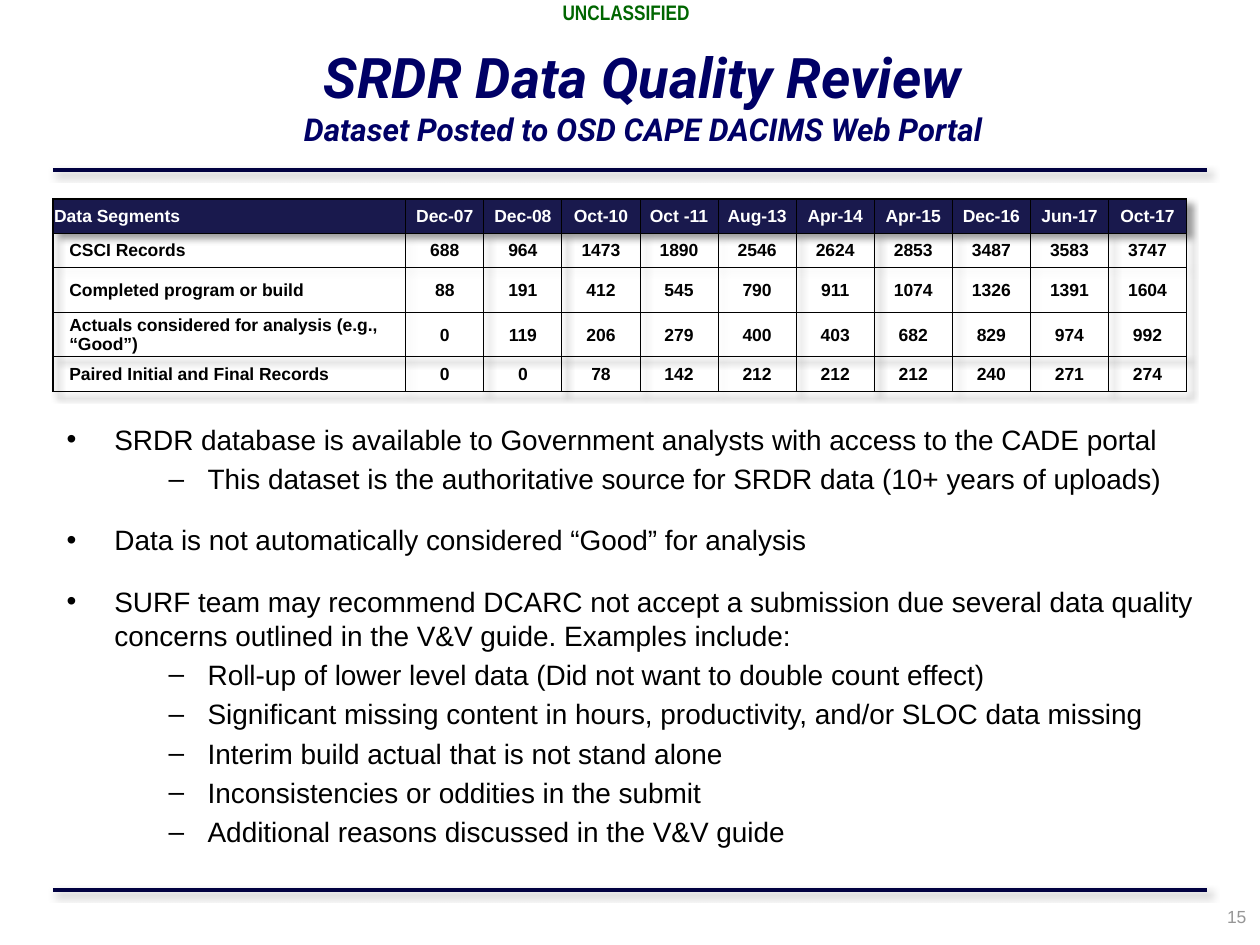
from lxml.etree import SubElement
from pptx import Presentation
from pptx.dml.color import RGBColor
from pptx.enum.shapes import MSO_CONNECTOR
from pptx.enum.text import MSO_ANCHOR, PP_ALIGN
from pptx.oxml.ns import qn
from pptx.util import Inches, Pt

COLORS = {
    "rule": "010141", "marking": "006600", "title": "000066", "header": "19194D",
    "black": "000000", "white": "FFFFFF", "number": "969696",
}

HEADINGS = ["Data Segments", "Dec-07", "Dec-08", "Oct-10", "Oct -11", "Aug-13",
            "Apr-14", "Apr-15", "Dec-16", "Jun-17", "Oct-17"]
SEGMENTS = [
    ["CSCI Records", 688, 964, 1473, 1890, 2546, 2624, 2853, 3487, 3583, 3747],
    ["Completed program or build", 88, 191, 412, 545, 790, 911, 1074, 1326, 1391, 1604],
    ["Actuals considered for analysis (e.g., “Good”)",
     0, 119, 206, 279, 400, 403, 682, 829, 974, 992],
    ["Paired Initial and Final Records", 0, 0, 78, 142, 212, 212, 212, 240, 271, 274],
]
ROW_HEIGHTS = [0.27, 0.27, 0.36, 0.35, 0.28]
LABEL_WIDTH, DATE_WIDTH = 2.8, 0.62

# Each topic is followed by its subpoints
TOPICS = [
    ("SRDR database is available to Government analysts with access to the CADE portal",
     ["This dataset is the authoritative source for SRDR data (10+ years of uploads)"]),
    ("Data is not automatically considered “Good” for analysis", []),
    ("SURF team may recommend DCARC not accept a submission due several data quality "
     "concerns outlined in the V&V guide. Examples include:",
     ["Roll-up of lower level data (Did not want to double count effect)",
      "Significant missing content in hours, productivity, and/or SLOC data missing",
      "Interim build actual that is not stand alone",
      "Inconsistencies or oddities in the submit",
      "Additional reasons discussed in the V&V guide"]),
]


def style_text(para, size, color, font="Arial", bold=False, italic=False):
    for span in para.runs:
        span.font.name = font
        span.font.size = Pt(size)
        span.font.bold = bold
        span.font.italic = italic
        span.font.color.rgb = RGBColor.from_string(COLORS[color])


def add_box(page, left, top, width, height, insets=(0.1, 0.05), wrap=True):
    box = page.shapes.add_textbox(Inches(left), Inches(top), Inches(width), Inches(height))
    frame = box.text_frame
    frame.word_wrap = wrap
    frame.margin_left = frame.margin_right = Inches(insets[0])
    frame.margin_top = frame.margin_bottom = Inches(insets[1])
    return frame


def add_label(page, text, place, align, size, color, **options):
    para = add_box(page, *place, **options).paragraphs[0]
    para.text = text
    para.alignment = align
    return para


def add_shadow(parent, index):
    """Put a soft shadow to the lower right in the given properties element."""
    effects = SubElement(parent, qn("a:effectLst"))
    parent.insert(index, effects)
    shadow = SubElement(effects, qn("a:outerShdw"), blurRad=str(Pt(4)), dist=str(Pt(3)),
                        dir="2700000", algn="tl", rotWithShape="0")
    color = SubElement(shadow, qn("a:srgbClr"), val=COLORS["black"])
    SubElement(color, qn("a:alpha"), val="40000")


def add_rule(page, top):
    rule = page.shapes.add_connector(MSO_CONNECTOR.STRAIGHT, Inches(0.42), Inches(top),
                                     Inches(9.58), Inches(top))
    rule.line.color.rgb = RGBColor.from_string(COLORS["rule"])
    rule.line.width = Pt(2.25)
    properties = rule._element.spPr
    add_shadow(properties, len(properties))


def set_borders(cell, widths):
    properties = cell._tc.get_or_add_tcPr()
    for index, (side, width) in enumerate(widths.items()):
        line = SubElement(properties, qn(f"a:ln{side}"), w=str(Pt(width)))
        properties.insert(index, line)
        fill = SubElement(line, qn("a:solidFill"))
        SubElement(fill, qn("a:srgbClr"), val=COLORS["black"])


def fill_cell(cell, text, is_header, is_label):
    cell.margin_left = cell.margin_right = cell.margin_top = Inches(0.01)
    cell.margin_bottom = 0
    cell.vertical_anchor = MSO_ANCHOR.MIDDLE
    para = cell.text_frame.paragraphs[0]
    para.text = str(text)
    para.alignment = PP_ALIGN.LEFT if is_label else PP_ALIGN.CENTER
    if is_label and not is_header:
        para._p.get_or_add_pPr().set("marL", str(Inches(0.12)))
    style_text(para, 10, "white" if is_header else "black", bold=True)
    if is_header:
        cell.fill.solid()
        cell.fill.fore_color.rgb = RGBColor.from_string(COLORS["header"])
    else:
        cell.fill.background()


def add_segment_table(page):
    rows = [HEADINGS] + SEGMENTS
    last = len(rows) - 1
    table = page.shapes.add_table(len(rows), len(HEADINGS), Inches(0.42), Inches(1.58),
                                  Inches(9), Inches(sum(ROW_HEIGHTS))).table
    table.first_row = table.horz_banding = False
    add_shadow(table._tbl.tblPr, 0)
    for index, column in enumerate(table.columns):
        column.width = Inches(DATE_WIDTH if index else LABEL_WIDTH)
    for r, values in enumerate(rows):
        table.rows[r].height = Inches(ROW_HEIGHTS[r])
        for c, value in enumerate(values):
            cell = table.cell(r, c)
            fill_cell(cell, value, r == 0, c == 0)
            # Thicker outer edge on the left, top and bottom
            set_borders(cell, {"L": 0.5 if c else 1, "R": 0.5,
                               "T": 0.5 if r else 1, "B": 1 if r == last else 0.5})


def add_bullet(frame, text, symbol, margin, hanging, space_before):
    is_first = not frame.paragraphs[0].runs
    para = frame.paragraphs[0] if is_first else frame.add_paragraph()
    para.text = text
    para.line_spacing = Pt(19.4)
    if not is_first:
        para.space_before = Pt(space_before)
    properties = para._p.get_or_add_pPr()
    properties.set("marL", str(Inches(margin)))
    properties.set("indent", str(-Inches(hanging)))
    SubElement(properties, qn("a:buFont"), typeface="Arial")
    SubElement(properties, qn("a:buChar"), char=symbol)
    style_text(para, 16, "black")


def add_topics(page):
    frame = add_box(page, 0.43, 3.25, 9.23, 4.01, insets=(0.1, 0.1))
    for topic, subpoints in TOPICS:
        add_bullet(frame, topic, "•", 0.38, 0.38, 15.6)
        for subpoint in subpoints:
            add_bullet(frame, subpoint, "–", 1.12, 0.31, 3.1)


def add_title(page):
    frame = add_box(page, 0.71, 0.25, 8.79, 1.01, insets=(0.07, 0.03))
    frame.vertical_anchor = MSO_ANCHOR.MIDDLE
    frame.text = "SRDR Data Quality Review\nDataset Posted to OSD CAPE DACIMS Web Portal"
    for para, size in zip(frame.paragraphs, (32, 18)):
        para.alignment = PP_ALIGN.CENTER
        style_text(para, size, "title", "Roboto", bold=True, italic=True)


def main():
    deck = Presentation()
    deck.slide_width, deck.slide_height = Inches(10), Inches(7.5)
    page = deck.slides.add_slide(deck.slide_layouts[6])

    # Frame of the page: rules, marking and number
    for top in (7.06, 1.35):
        add_rule(page, top)
    marking = add_label(page, "UNCLASSIFIED", (4.44, 0, 1.06, 0.2), PP_ALIGN.CENTER,
                        12, "marking", insets=(0, 0), wrap=False)
    style_text(marking, 12, "marking", "Arial Narrow", bold=True)
    number = add_label(page, "15", (8.74, 7.14, 1.25, 0.33), PP_ALIGN.RIGHT, 10, "number")
    style_text(number, 10, "number")

    # Content
    add_title(page)
    add_segment_table(page)
    add_topics(page)

    deck.save("out.pptx")


if __name__ == "__main__":
    main()
